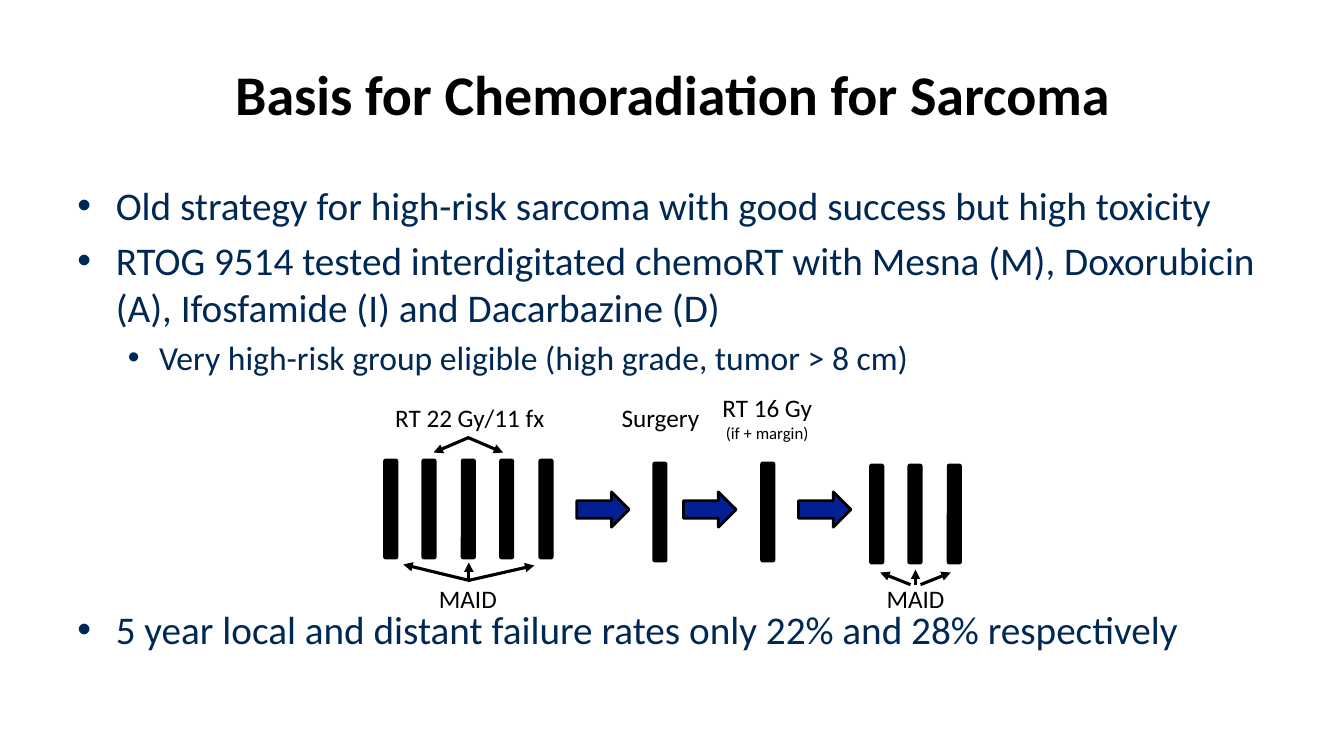
from lxml.etree import SubElement
from pptx import Presentation
from pptx.dml.color import RGBColor
from pptx.enum.shapes import MSO_CONNECTOR as CONN, MSO_SHAPE as SHAPE
from pptx.enum.text import MSO_ANCHOR as ANCHOR, PP_ALIGN as ALIGN
from pptx.oxml.ns import qn
from pptx.util import Pt

PX = 9144
BLACK, NAVY, BLUE = "000000", "002855", "041F93"


def rgb(value):
    return RGBColor.from_string(value)


def add_text(box, lines, color, anchor=ANCHOR.TOP, wrap=True, bold=False):
    sp = s.shapes.add_textbox(*[v * PX for v in box])
    tf = sp.text_frame
    tf.text = "\n".join(text for text, size in lines)
    tf.word_wrap = wrap
    tf.vertical_anchor = anchor
    for p, (text, size) in zip(tf.paragraphs, lines):
        p.alignment = ALIGN.CENTER
        for r in p.runs:
            r.font.name = "Calibri"
            r.font.size = Pt(size)
            r.font.bold = bold
            r.font.color.rgb = rgb(color)
    return tf


prs = Presentation()
prs.slide_width, prs.slide_height = 1333 * PX, 750 * PX
s = prs.slides.add_slide(prs.slide_layouts[6])

add_text((67, 30, 1200, 125), [("Basis for Chemoradiation for Sarcoma", 40)],
         BLACK, ANCHOR.MIDDLE, bold=True)

bullets = [
    ("Old strategy for high-risk sarcoma with good success but high toxicity", 28, 0, 38, 38, 0),
    ("RTOG 9514 tested interdigitated chemoRT with Mesna (M), Doxorubicin "
     "(A), Ifosfamide (I) and Dacarbazine (D)", 28, 0, 38, 38, 5.6),
    ("Very high-risk group eligible (high grade, tumor > 8 cm)", 24, 1, 81, 31, 4.8),
    ("5 year local and distant failure rates only 22% and 28% respectively", 28, 0, 38, 38, 163),
]
tf = add_text((67, 175, 1200, 495), [b[:2] for b in bullets], NAVY)
for p, (text, size, level, margin, hang, before) in zip(tf.paragraphs, bullets):
    p.alignment = ALIGN.LEFT
    p.level = level
    p.space_before = Pt(before)
    pPr = p._p.get_or_add_pPr()
    pPr.set("marL", str(margin * PX))
    pPr.set("indent", str(-hang * PX))
    SubElement(SubElement(pPr, qn("a:buClr")), qn("a:srgbClr"), val=NAVY)
    SubElement(pPr, qn("a:buFont"), typeface="Arial")
    SubElement(pPr, qn("a:buChar"), char="•")

for left, top, count in [(380, 455, 5), (647, 458, 1), (754, 458, 1), (862, 460, 3)]:
    for i in range(count):
        bar = s.shapes.add_shape(SHAPE.ROUNDED_RECTANGLE, (left + 77 * i // 2) * PX,
                                 top * PX, 15 * PX, 100 * PX)
        bar.shadow.inherit = False
        bar.fill.solid()
        bar.fill.fore_color.rgb = rgb(BLACK)
        bar.line.fill.background()

for left in (572, 678, 792):
    arrow = s.shapes.add_shape(SHAPE.RIGHT_ARROW, left * PX, 488 * PX, 52 * PX, 35 * PX)
    arrow.shadow.inherit = False
    arrow.fill.solid()
    arrow.fill.fore_color.rgb = rgb(BLUE)
    arrow.line.color.rgb = rgb(BLACK)
    arrow.line.width = Pt(2)

labels = [
    ((381, 394, 170, 40), [("RT 22 Gy/11 fx", 18)]),
    ((606, 394, 98, 40), [("Surgery", 18)]),
    ((706, 384, 110, 61), [("RT 16 Gy", 18), ("(if + margin)", 12)]),
    ((425, 574, 78, 40), [("MAID", 18)]),
    ((869, 574, 78, 40), [("MAID", 18)]),
]
for box, lines in labels:
    add_text(box, lines, BLACK, wrap=False)

pointers = [
    (465, 434, 430, 449), (464, 434, 499, 449),
    (464, 576, 530, 561), (466, 576, 400, 560), (465, 576, 465, 558),
    (903, 580, 873, 568), (908, 580, 908, 565), (913, 580, 943, 568),
]
for ends in pointers:
    cn = s.shapes.add_connector(CONN.STRAIGHT, *[v * PX for v in ends])
    cn.line.color.rgb = rgb(BLACK)
    cn.line.width = Pt(2.25)
    SubElement(cn.line._get_or_add_ln(), qn("a:tailEnd"), type="triangle")
    SubElement(cn._element.spPr, qn("a:effectLst"))

prs.save("out.pptx")
